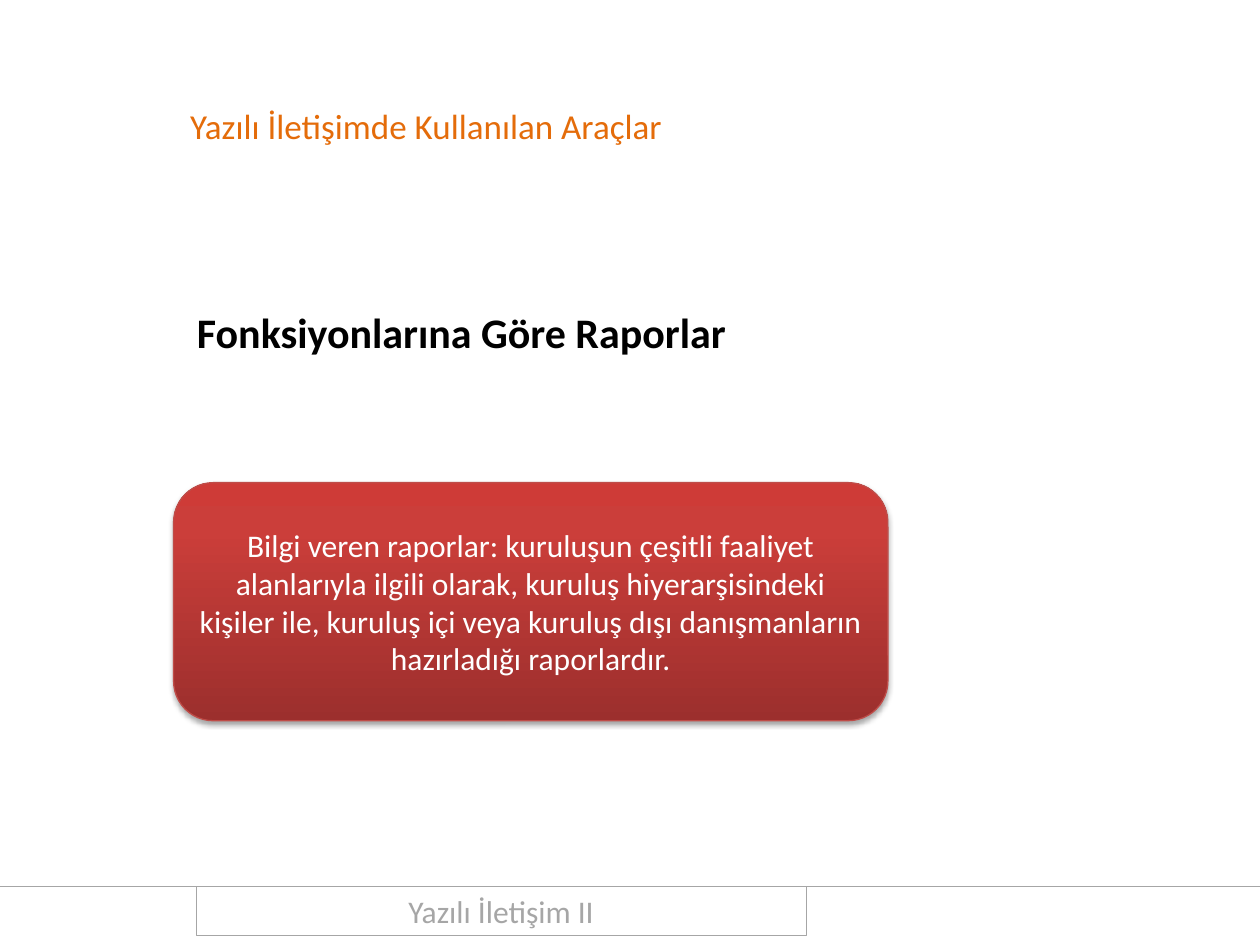
from copy import deepcopy
from dataclasses import dataclass

from lxml.etree import SubElement
from pptx import Presentation
from pptx.dml.color import RGBColor
from pptx.enum.shapes import MSO_CONNECTOR as Connector
from pptx.enum.shapes import MSO_SHAPE as Shape
from pptx.enum.text import MSO_ANCHOR as Anchor
from pptx.enum.text import PP_ALIGN as Align
from pptx.oxml.ns import qn
from pptx.util import Cm, Pt


@dataclass(frozen=True)
class Theme:
    font: str = "Calibri"
    accent: str = "E46C0A"
    ink: str = "000000"
    muted: str = "A6A6A6"
    paper: str = "FFFFFF"
    card_line: str = "BF4C48"
    card_stops: tuple = ((0, "9C2F2D"), (0.8, "CB3E3A"), (1, "CE3B37"))
    title_size: int = 20
    heading_size: int = 24
    body_size: int = 18
    hairline: float = 0.25
    card_border: float = 0.75


@dataclass(frozen=True)
class Box:
    left: float
    top: float
    width: float
    height: float

    def lengths(self):
        return Cm(self.left), Cm(self.top), Cm(self.width), Cm(self.height)


THEME = Theme()


def rgb(value):
    return RGBColor.from_string(value)


def write_text(shape, text, size, color, align=Align.CENTER, anchor=Anchor.MIDDLE, bold=False):
    frame = shape.text_frame
    frame.text = text
    frame.word_wrap = True
    frame.vertical_anchor = anchor
    para = frame.paragraphs[0]
    para.alignment = align
    font = para.runs[0].font
    font.name = THEME.font
    font.size = Pt(size)
    font.bold = bold
    font.color.rgb = rgb(color)


def set_line(shape, color, width):
    shape.line.color.rgb = rgb(color)
    shape.line.width = Pt(width)


def add_shadow(shape, opacity, blur, distance):
    effects = SubElement(shape._element.spPr, qn("a:effectLst"))
    shadow = SubElement(effects, qn("a:outerShdw"), blurRad=str(Pt(blur)),
                        dist=str(Pt(distance)), dir="5400000", rotWithShape="0")
    color = SubElement(shadow, qn("a:srgbClr"), val=THEME.ink)
    SubElement(color, qn("a:alpha"), val=str(opacity * 1000))


def fill_gradient(shape, stops):
    shape.fill.gradient()
    shape.fill.gradient_angle = 90
    stop_list = shape._element.spPr.find(".//" + qn("a:gsLst"))
    stop_list.append(deepcopy(stop_list[-1]))
    for stop, (position, color) in zip(shape.fill.gradient_stops, stops):
        stop.position = position
        stop.color.rgb = rgb(color)


def place_title(page, box, text):
    title = page.shapes.title
    title.left, title.top, title.width, title.height = box.lengths()
    write_text(title, text, THEME.title_size, THEME.accent, Align.LEFT, Anchor.TOP)


def add_heading(page, box, text):
    heading = page.shapes.add_textbox(*box.lengths())
    write_text(heading, text, THEME.heading_size, THEME.ink, anchor=Anchor.TOP, bold=True)


def add_footer(page, box, text):
    right, top = Cm(box.left + box.width), Cm(box.top)
    rule = page.shapes.add_connector(Connector.STRAIGHT, Cm(box.left), top, right, top)
    set_line(rule, THEME.muted, THEME.hairline)
    add_shadow(rule, 40, 4, 3)

    label_box = Box(box.left + 3.96, box.top, 12.29, box.height)
    label = page.shapes.add_shape(Shape.RECTANGLE, *label_box.lengths())
    label.shadow.inherit = False
    label.fill.background()
    set_line(label, THEME.muted, THEME.hairline)
    write_text(label, text, THEME.body_size, THEME.muted)


def add_card(page, box, text):
    card = page.shapes.add_shape(Shape.ROUNDED_RECTANGLE, *box.lengths())
    fill_gradient(card, THEME.card_stops)
    set_line(card, THEME.card_line, THEME.card_border)
    add_shadow(card, 35, 3.1, 1.8)
    write_text(card, text, THEME.body_size, THEME.paper)


def main():
    deck = Presentation()
    deck.slide_width, deck.slide_height = Cm(25.4), Cm(19.05)
    page = deck.slides.add_slide(deck.slide_layouts[5])
    page.background.fill.solid()
    page.background.fill.fore_color.rgb = rgb(THEME.paper)

    place_title(page, Box(3.58, 1.98, 13.49, 1.12), "Yazılı İletişimde Kullanılan Araçlar")
    add_heading(page, Box(1.9, 6.05, 14.81, 1.27), "Fonksiyonlarına Göre Raporlar")
    add_footer(page, Box(0, 17.86, 25.4, 0.99), "Yazılı İletişim II")
    add_card(page, Box(3.5, 9.73, 14.4, 4.8),
             "Bilgi veren raporlar: kuruluşun çeşitli faaliyet alanlarıyla ilgili olarak, "
             "kuruluş hiyerarşisindeki kişiler ile, kuruluş içi veya kuruluş dışı "
             "danışmanların hazırladığı raporlardır.")
    deck.save("out.pptx")


if __name__ == "__main__":
    main()
